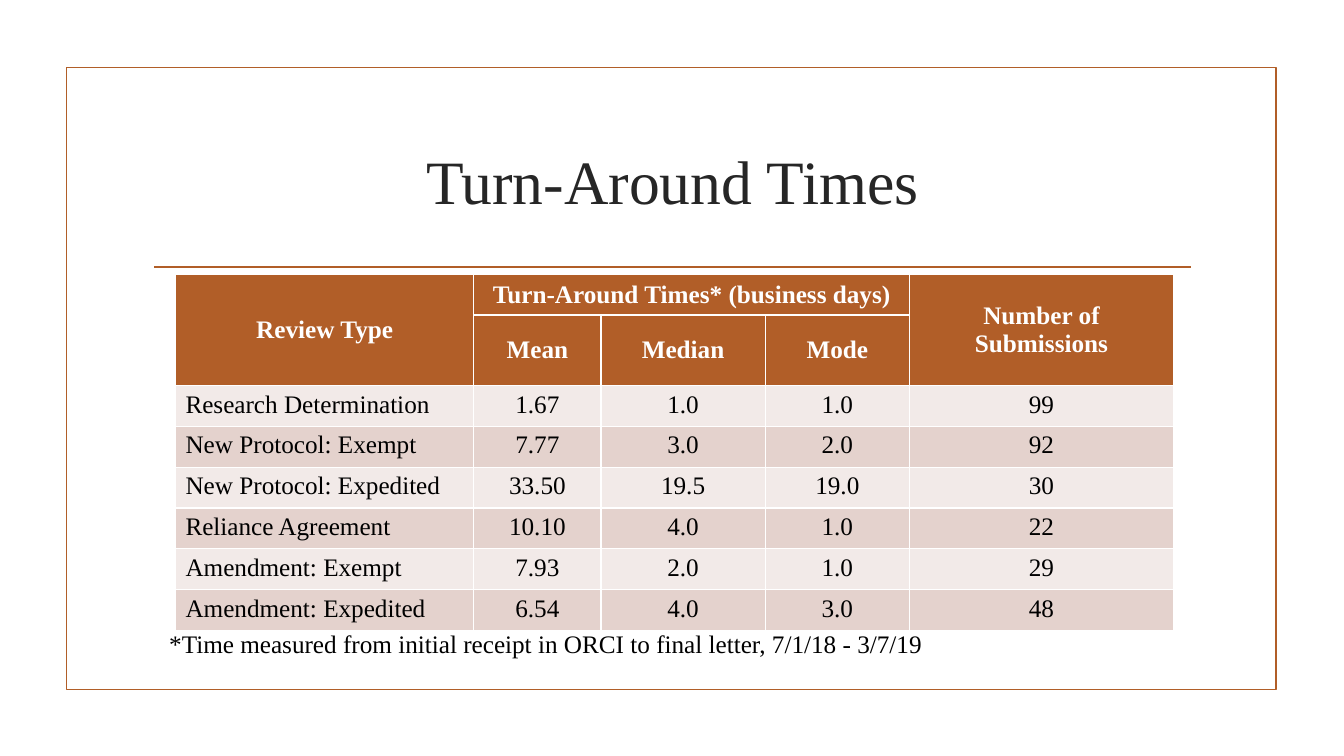
from lxml.etree import SubElement
from pptx import Presentation
from pptx.dml.color import RGBColor
from pptx.enum.shapes import MSO_CONNECTOR as Connector, MSO_SHAPE as Shape
from pptx.enum.text import MSO_ANCHOR as Anchor, MSO_AUTO_SIZE as AutoSize, PP_ALIGN as Align
from pptx.oxml.ns import qn
from pptx.util import Inches, Pt

RUST = RGBColor(0xB1, 0x5E, 0x28)
LIGHT_BAND = RGBColor(0xF2, 0xEA, 0xE8)
DARK_BAND = RGBColor(0xE4, 0xD2, 0xCD)
CHARCOAL = RGBColor(0x26, 0x26, 0x26)
BLACK = RGBColor(0, 0, 0)
WHITE = RGBColor(0xFF, 0xFF, 0xFF)

COLUMN_WIDTHS = [2.96, 1.26, 1.63, 1.43, 2.62]
TABLE_HEIGHT = 3.24
HEADER_ROWS = 2
ROWS = [
    ["Review Type", "Turn-Around Times* (business days)", "", "", "Number of Submissions"],
    ["", "Mean", "Median", "Mode", ""],
    ["Research Determination", "1.67", "1.0", "1.0", "99"],
    ["New Protocol: Exempt", "7.77", "3.0", "2.0", "92"],
    ["New Protocol: Expedited", "33.50", "19.5", "19.0", "30"],
    ["Reliance Agreement", "10.10", "4.0", "1.0", "22"],
    ["Amendment: Exempt", "7.93", "2.0", "1.0", "29"],
    ["Amendment: Expedited", "6.54", "4.0", "3.0", "48"],
]


def write(frame, text, color, size=18, bold=False, align=Align.LEFT):
    para = frame.paragraphs[0]
    para.alignment = align
    span = para.add_run()
    span.text = text
    span.font.color.rgb = color
    formats = {"name": "Times New Roman", "size": Pt(size), "bold": bold}
    for name, value in formats.items():
        setattr(span.font, name, value)


deck = Presentation()
deck.slide_width, deck.slide_height = Inches(13.33), Inches(7.5)
page = deck.slides.add_slide(deck.slide_layouts[5])

# Frame around the page
border = page.shapes.add_shape(Shape.RECTANGLE, Inches(0.66), Inches(0.67), Inches(12), Inches(6.17))
border.shadow.inherit = False
border.fill.background()

# Rule under the title
rule = page.shapes.add_connector(
    Connector.STRAIGHT, Inches(1.53), Inches(2.65), Inches(11.81), Inches(2.65))
SubElement(rule.line._get_or_add_ln().getparent(), qn("a:effectLst"))
for outlined in (border, rule):
    outlined.line.color.rgb = RUST
    outlined.line.width = Pt(1.25)

# Title
title = page.shapes.title
title.left, title.top, title.width, title.height = map(Inches, (1.42, 1.07, 10.5, 1.43))
title.text_frame.vertical_anchor = Anchor.MIDDLE
write(title.text_frame, "Turn-Around Times", CHARCOAL, size=44, align=Align.CENTER)

# Footnote
footnote = page.shapes.add_textbox(Inches(1.58), Inches(6.18), Inches(7.7), Inches(0.4))
footnote.text_frame.word_wrap = False
footnote.text_frame.auto_size = AutoSize.SHAPE_TO_FIT_TEXT
write(footnote.text_frame,
      "*Time measured from initial receipt in ORCI to final letter, 7/1/18 - 3/7/19", BLACK)

# Table with a two-row header; the default style draws the white cell borders
table = page.shapes.add_table(
    len(ROWS), len(COLUMN_WIDTHS), Inches(1.74), Inches(2.72),
    Inches(sum(COLUMN_WIDTHS)), Inches(TABLE_HEIGHT)).table
for column, width in zip(table.columns, COLUMN_WIDTHS):
    column.width = Inches(width)
for first, last in (((0, 0), (1, 0)), ((0, 1), (0, 3)), ((0, 4), (1, 4))):
    table.cell(*first).merge(table.cell(*last))

for row, values in enumerate(ROWS):
    header = row < HEADER_ROWS
    band = DARK_BAND if row % 2 else LIGHT_BAND
    for col, value in enumerate(values):
        cell = table.cell(row, col)
        cell.fill.solid()
        cell.fill.fore_color.rgb = RUST if header else band
        if header:
            cell.vertical_anchor = Anchor.MIDDLE
        if value:
            write(cell.text_frame, value, WHITE if header else BLACK, bold=header,
                  align=Align.CENTER if header or col else Align.LEFT)

deck.save("out.pptx")
